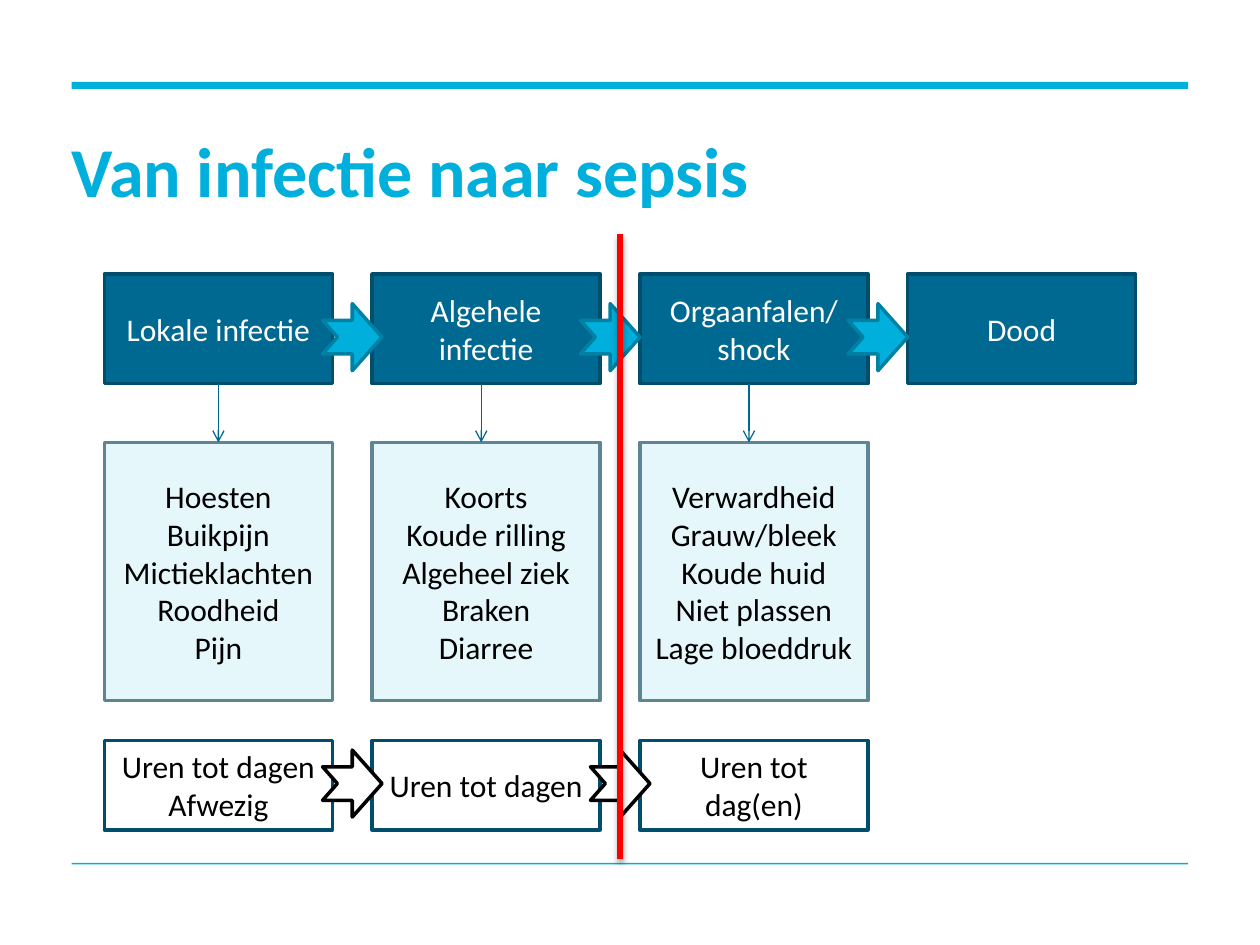
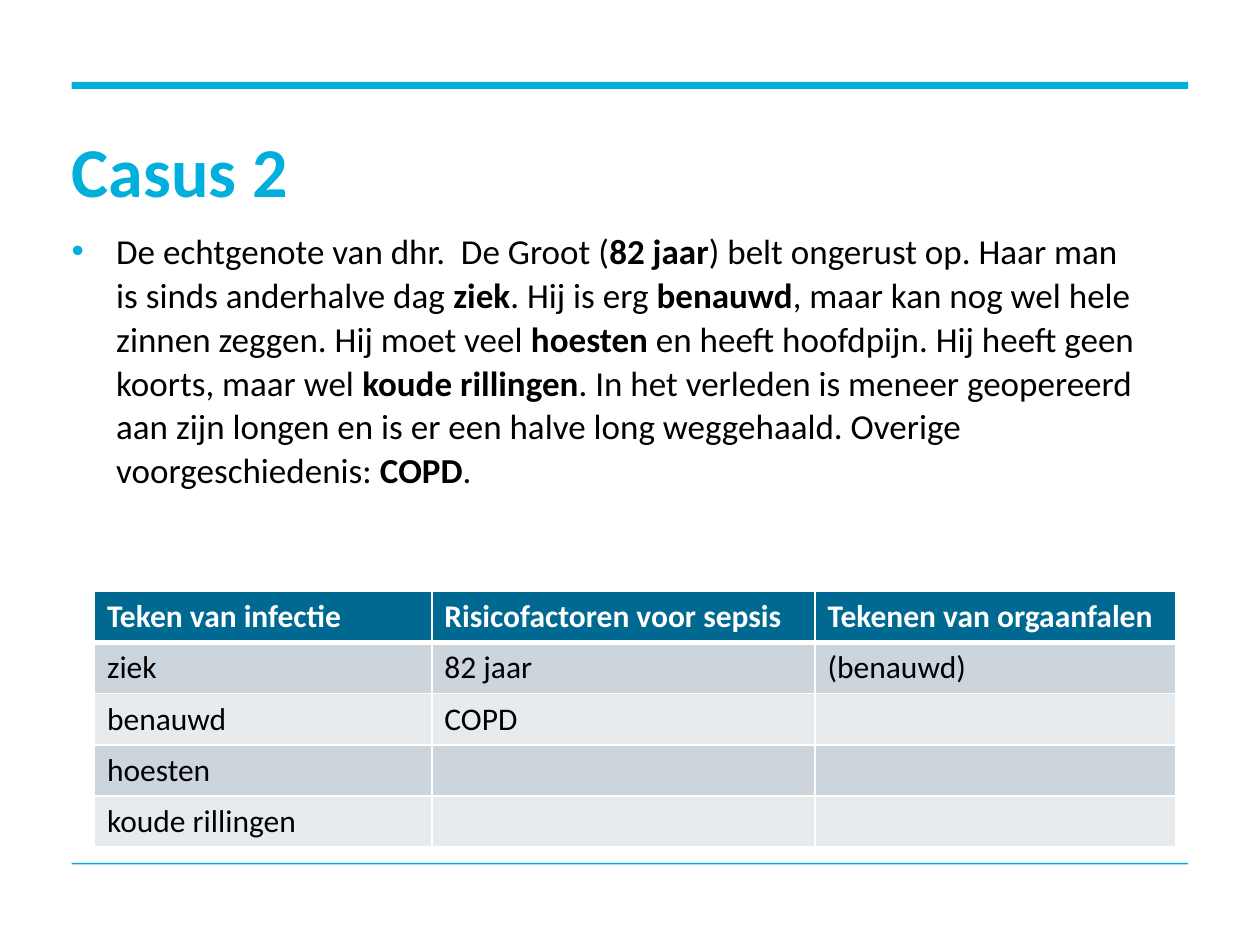
from dataclasses import dataclass

from lxml.etree import SubElement
from pptx import Presentation
from pptx.dml.color import RGBColor
from pptx.enum.shapes import MSO_CONNECTOR, MSO_SHAPE
from pptx.enum.text import MSO_ANCHOR, MSO_AUTO_SIZE, PP_ALIGN
from pptx.oxml.ns import qn
from pptx.util import Pt


@dataclass(frozen=True)
class Theme:
    font: str = "Calibri"
    title_size: int = 40
    body_size: int = 20
    label_size: int = 18
    accent: str = "00AFDC"
    accent_edge: str = "0081A3"
    dark: str = "006991"
    dark_edge: str = "004E6B"
    pale: str = "E5F7FB"
    pale_edge: str = "5E8594"
    connector: str = "00678E"
    alarm: str = "FF0000"
    white: str = "FFFFFF"
    black: str = "000000"
    bands: tuple = ("E7EBEE", "CCD4DC")


MARGIN, CONTENT_WIDTH = 41, 638


def rgb(value):
    return RGBColor.from_string(value)


def add_color(parent, value):
    return SubElement(parent, qn("a:srgbClr"), val=value)


class Deck:
    def __init__(self, theme):
        self.theme = theme
        self.prs = Presentation()
        self.prs.slide_width, self.prs.slide_height = Pt(720), Pt(540)
        self.s = None

    def slide(self, title):
        t = self.theme
        self.s = self.prs.slides.add_slide(self.prs.slide_layouts[5])
        for top, height in ((46.8, 4), (493, 1)):
            self.shape(MSO_SHAPE.RECTANGLE, MARGIN, top, CONTENT_WIDTH, height, t.accent)
        sp = self.s.shapes.title
        sp.left, sp.top, sp.width, sp.height = Pt(MARGIN), Pt(79), Pt(CONTENT_WIDTH), Pt(42)
        tf = self.plain_frame(sp)
        tf.vertical_anchor = MSO_ANCHOR.MIDDLE
        p = tf.paragraphs[0]
        p.alignment, p.line_spacing = PP_ALIGN.LEFT, Pt(42)
        self.run(p, title, t.title_size, t.accent, bold=True)

    def plain_frame(self, sp):
        """Wrap the text of sp, without insets or autofit."""
        tf = sp.text_frame
        tf.word_wrap, tf.auto_size = True, MSO_AUTO_SIZE.NONE
        tf.margin_left = tf.margin_top = tf.margin_right = tf.margin_bottom = 0
        return tf

    def run(self, p, text, size, color, bold=False):
        r = p.add_run()
        r.text = text
        r.font.name, r.font.size, r.font.bold = self.theme.font, Pt(size), bold
        r.font.color.rgb = rgb(color)

    def shape(self, kind, left, top, width, height, fill, edge=None):
        sp = self.s.shapes.add_shape(kind, Pt(left), Pt(top), Pt(width), Pt(height))
        sp.shadow.inherit = False
        sp.fill.solid()
        sp.fill.fore_color.rgb = rgb(fill)
        if edge:
            sp.line.color.rgb, sp.line.width = rgb(edge), Pt(2)
        else:
            sp.line.fill.background()
        return sp

    def box(self, left, top, width, height, lines, fill, edge, color):
        tf = self.shape(MSO_SHAPE.RECTANGLE, left, top, width, height, fill, edge).text_frame
        tf.word_wrap, tf.vertical_anchor = True, MSO_ANCHOR.MIDDLE
        for i, line in enumerate(lines):
            p = tf.add_paragraph() if i else tf.paragraphs[0]
            p.alignment = PP_ALIGN.CENTER
            self.run(p, line, self.theme.label_size, color)

    def step_arrow(self, left, top, fill, edge):
        self.shape(MSO_SHAPE.NOTCHED_RIGHT_ARROW, left, top, 34, 38.3, fill, edge)

    def vertical_line(self, x, top, bottom, color, width, arrow=False, shadow=False):
        line = self.s.shapes.add_connector(
            MSO_CONNECTOR.STRAIGHT, Pt(x), Pt(top), Pt(x), Pt(bottom))
        line.line.color.rgb, line.line.width = rgb(color), Pt(width)
        if arrow:
            SubElement(line.line._get_or_add_ln(), qn("a:tailEnd"), type="arrow")
        effects = SubElement(line._element.spPr, qn("a:effectLst"))
        if shadow:
            outer = SubElement(effects, qn("a:outerShdw"), blurRad=str(Pt(3.1)),
                               dist=str(Pt(1.8)), dir="5400000", rotWithShape="0")
            SubElement(add_color(outer, self.theme.black), qn("a:alpha"), val="35000")

    def bullet(self, left, top, width, height, parts):
        """Add one bulleted paragraph; every second part is bold."""
        t = self.theme
        tf = self.plain_frame(
            self.s.shapes.add_textbox(Pt(left), Pt(top), Pt(width), Pt(height)))
        p = tf.paragraphs[0]
        pPr = p._p.get_or_add_pPr()
        pPr.set("marL", str(Pt(25.4)))
        pPr.set("indent", str(Pt(-25.4)))
        add_color(SubElement(pPr, qn("a:buClr")), t.accent)
        SubElement(pPr, qn("a:buFont"), typeface="Arial")
        SubElement(pPr, qn("a:buChar"), char="•")
        p.line_spacing = Pt(25)
        for i, part in enumerate(parts):
            self.run(p, part, t.body_size, t.black, bold=i % 2 == 1)

    def borders(self, cell, top, bottom):
        tcPr = cell._tc.get_or_add_tcPr()
        for side, width in zip("LRTB", (1, 1, top, bottom)):
            ln = SubElement(tcPr, qn(f"a:ln{side}"), w=str(Pt(width)))
            add_color(SubElement(ln, qn("a:solidFill")), self.theme.white)

    def table(self, left, top, widths, row_height, rows):
        t = self.theme
        table = self.s.shapes.add_table(
            len(rows), len(widths), Pt(left), Pt(top),
            Pt(sum(widths)), Pt(row_height * len(rows))).table
        for column, width in zip(table.columns, widths):
            column.width = Pt(width)
        for i, row in enumerate(rows):
            table.rows[i].height = Pt(row_height)
            header = i == 0
            for j, text in enumerate(row):
                cell = table.cell(i, j)
                self.borders(cell, 3 if i == 1 else 1, 3 if header else 1)
                cell.fill.solid()
                cell.fill.fore_color.rgb = rgb(t.dark if header else t.bands[i % 2])
                if text:
                    self.run(cell.text_frame.paragraphs[0], text, t.label_size,
                             t.white if header else t.black, bold=header)


def infection_to_sepsis(deck):
    t = deck.theme
    box_width = 130.4
    columns = [59.6 + 153 * i for i in range(4)]
    stages = ["Lokale infectie", "Algehele infectie", "Orgaanfalen/ shock", "Dood"]
    symptoms = [
        ["Hoesten", "Buikpijn", "Mictieklachten", "Roodheid", "Pijn"],
        ["Koorts", "Koude rilling", "Algeheel ziek", "Braken", "Diarree"],
        ["Verwardheid", "Grauw/bleek", "Koude huid", "Niet plassen", "Lage bloeddruk"],
    ]
    durations = [["Uren tot dagen", "Afwezig"], ["Uren tot dagen"], ["Uren tot dag(en)"]]

    deck.slide("Van infectie naar sepsis")
    for left, stage in zip(columns, stages):
        deck.box(left, 156.6, box_width, 62.6, [stage], t.dark, t.dark_edge, t.white)
    for left in (184.3, 331.7, 484.7):
        deck.step_arrow(left, 173.5, t.accent, t.accent_edge)
    for left, lines in zip(columns, symptoms):
        deck.box(left, 252.8, box_width, 147.5, lines, t.pale, t.pale_edge, t.black)
    for x in (124.8, 275, 428):
        deck.vertical_line(x, 219.2, 252.8, t.connector, 0.75, arrow=True)
    for left, lines in zip(columns, durations):
        deck.box(left, 423.2, box_width, 51, lines, t.white, t.dark_edge, t.black)
    for left in (184.3, 337.4):
        deck.step_arrow(left, 428.6, t.white, t.black)
    deck.vertical_line(354.3, 134, 491, t.alarm, 3, shadow=True)


def case_two(deck):
    deck.slide("Casus 2")
    deck.bullet(MARGIN, 130.3, 613.4, 325, [
        "De echtgenote van dhr.  De Groot (", "82 jaar",
        ") belt ongerust op. Haar man is sinds anderhalve dag ", "ziek",
        ". Hij is erg ", "benauwd",
        ", maar kan nog wel hele zinnen zeggen. Hij moet veel ", "hoesten",
        " en heeft hoofdpijn. Hij heeft geen koorts, maar wel ", "koude rillingen",
        ". In het verleden is meneer geopereerd aan zijn longen en is er een halve "
        "long weggehaald. Overige voorgeschiedenis: ", "COPD", ".",
    ])
    deck.table(54, 338, (192.8, 219, 206), 29.2, [
        ("Teken van infectie", "Risicofactoren voor sepsis", "Tekenen van orgaanfalen"),
        ("ziek", "82 jaar", "(benauwd)"),
        ("benauwd", "COPD", ""),
        ("hoesten", "", ""),
        ("koude rillingen", "", ""),
    ])


def main():
    deck = Deck(Theme())
    infection_to_sepsis(deck)
    case_two(deck)
    deck.prs.save("out.pptx")


if __name__ == "__main__":
    main()
